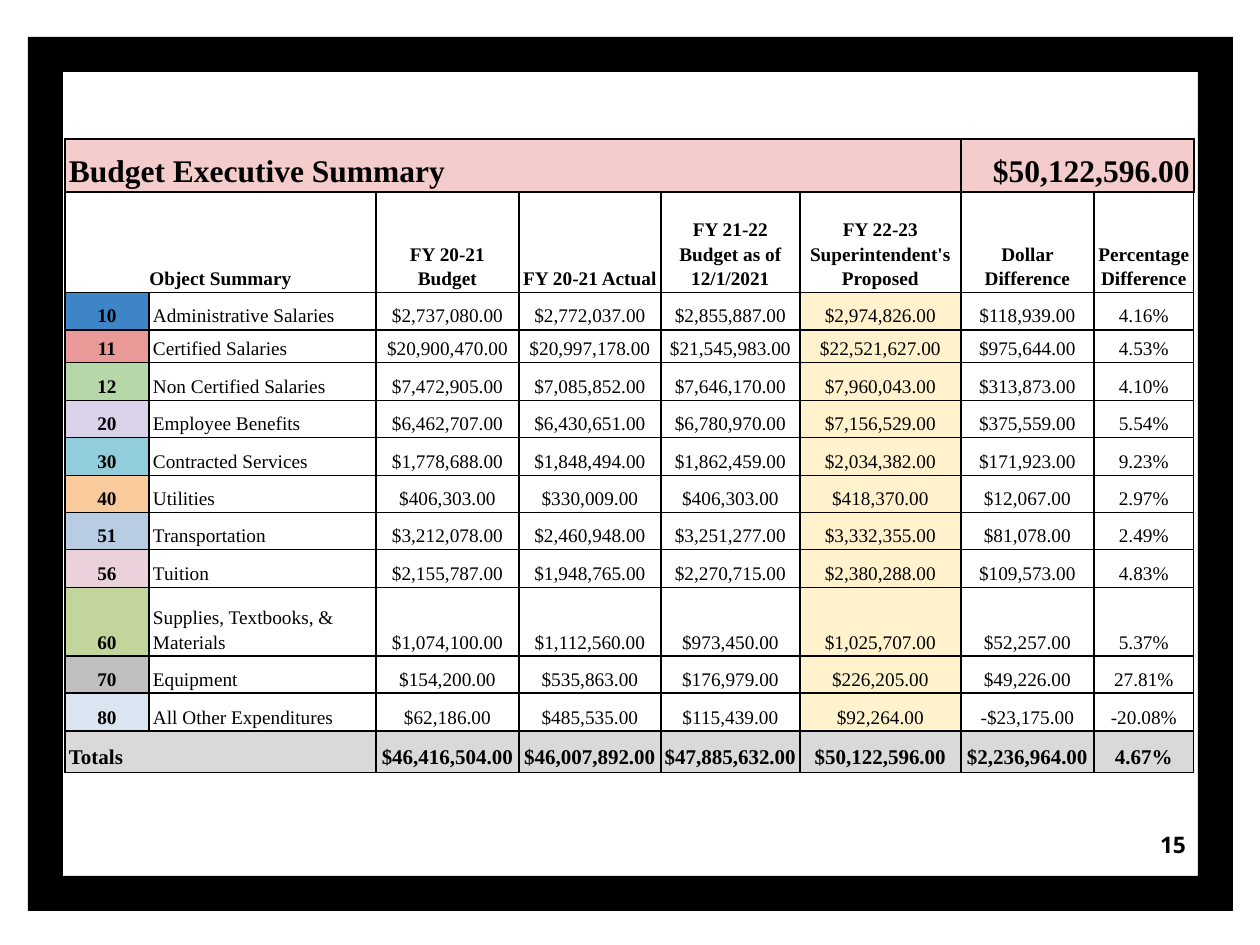
from pptx import Presentation
from pptx.dml.color import RGBColor
from pptx.enum.shapes import MSO_SHAPE
from pptx.enum.text import MSO_ANCHOR, PP_ALIGN
from pptx.oxml import parse_xml
from pptx.oxml.ns import nsdecls
from pptx.util import Pt

PX = 914400 // 126
THEME = {
    "ink": "000000", "banner": "F4CCCC", "proposed": "FFF2CC", "total": "D9D9D9",
    "serif": "Times New Roman", "sans": "Noto Sans",
    "title": 18, "body": 11, "sum": 12, "page": 13,
    "thin": 0.75, "rule": 1,
}
LEFT, MID, RIGHT = PP_ALIGN.LEFT, PP_ALIGN.CENTER, PP_ALIGN.RIGHT

BANNER = ["Budget Executive Summary", "", "", "", "", "", "$50,122,596.00", ""]
HEADS = ["Object Summary", "", "FY 20-21 Budget", "FY 20-21 Actual",
         "FY 21-22 Budget as of 12/1/2021", "FY 22-23 Superintendent's Proposed",
         "Dollar Difference", "Percentage Difference"]
ITEMS = [
    ["10", "Administrative Salaries", "$2,737,080.00", "$2,772,037.00",
     "$2,855,887.00", "$2,974,826.00", "$118,939.00", "4.16%"],
    ["11", "Certified Salaries", "$20,900,470.00", "$20,997,178.00",
     "$21,545,983.00", "$22,521,627.00", "$975,644.00", "4.53%"],
    ["12", "Non Certified Salaries", "$7,472,905.00", "$7,085,852.00",
     "$7,646,170.00", "$7,960,043.00", "$313,873.00", "4.10%"],
    ["20", "Employee Benefits", "$6,462,707.00", "$6,430,651.00",
     "$6,780,970.00", "$7,156,529.00", "$375,559.00", "5.54%"],
    ["30", "Contracted Services", "$1,778,688.00", "$1,848,494.00",
     "$1,862,459.00", "$2,034,382.00", "$171,923.00", "9.23%"],
    ["40", "Utilities", "$406,303.00", "$330,009.00",
     "$406,303.00", "$418,370.00", "$12,067.00", "2.97%"],
    ["51", "Transportation", "$3,212,078.00", "$2,460,948.00",
     "$3,251,277.00", "$3,332,355.00", "$81,078.00", "2.49%"],
    ["56", "Tuition", "$2,155,787.00", "$1,948,765.00",
     "$2,270,715.00", "$2,380,288.00", "$109,573.00", "4.83%"],
    ["60", "Supplies, Textbooks, & Materials", "$1,074,100.00", "$1,112,560.00",
     "$973,450.00", "$1,025,707.00", "$52,257.00", "5.37%"],
    ["70", "Equipment", "$154,200.00", "$535,863.00",
     "$176,979.00", "$226,205.00", "$49,226.00", "27.81%"],
    ["80", "All Other Expenditures", "$62,186.00", "$485,535.00",
     "$115,439.00", "$92,264.00", "-$23,175.00", "-20.08%"],
]
TOTALS = ["Totals", "", "$46,416,504.00", "$46,007,892.00", "$47,885,632.00",
          "$50,122,596.00", "$2,236,964.00", "4.67%"]
CODES = ["3D85C6", "EA9999", "B6D7A8", "D9D2E9", "92CDDC", "F9CB9C",
         "B8CCE4", "EAD1DC", "C2D69B", "BFBFBF", "DBE5F1"]
ROWS = [BANNER, HEADS, *ITEMS, TOTALS]
LAST = len(ROWS) - 1
WIDTHS = [84, 227, 143, 142, 139, 161, 133, 100]
HEIGHTS = [53, 101, 37, 32, 38, 37, 38, 37, 37, 38, 69, 37, 38, 41]
SPANS = [(0, 0, 5), (0, 6, 7), (1, 0, 1), (LAST, 0, 1)]


def px(*nums):
    return [n * PX for n in nums]


def write(frame, text, size="body", font="serif", bold=False, align=MID, gap=1.15):
    frame.word_wrap = True
    para = frame.paragraphs[0]
    para.alignment, para.line_spacing = align, gap
    run = para.add_run()
    run.text = text
    run.font.name, run.font.size, run.font.bold = THEME[font], Pt(THEME[size]), bold
    run.font.color.rgb = RGBColor.from_string(THEME["ink"])


def paint(cell, row, col):
    """Fill a cell by its row's kind, or by its column among the items."""
    if row == 0:
        color = THEME["banner"]
    elif row == LAST:
        color = THEME["total"]
    elif row > 1 and col == 0:
        color = CODES[row - 2]
    elif row > 1 and col == 5:
        color = THEME["proposed"]
    else:
        cell.fill.background()
        return
    cell.fill.solid()
    cell.fill.fore_color.rgb = RGBColor.from_string(color)


def border(cell, row, col):
    """Thin lines round the table, the heads and the codes; heavier ones inside."""
    thin = {
        "L": col < 2,
        "R": col in (0, len(WIDTHS) - 1),
        "T": row < 3,
        "B": row < 2 or row == LAST,
    }
    props = cell._tc.get_or_add_tcPr()
    for spot, (side, fine) in enumerate(thin.items()):
        width = Pt(THEME["thin" if fine else "rule"])
        props.insert(spot, parse_xml(
            f'<a:ln{side} {nsdecls("a")} w="{width}"><a:solidFill>'
            f'<a:srgbClr val="{THEME["ink"]}"/></a:solidFill></a:ln{side}>'))


def style(row, col):
    if row == 0:
        return {"size": "title", "bold": True, "align": RIGHT if col else LEFT}
    if row == LAST:
        return {"size": "sum", "bold": True, "align": MID if col else LEFT}
    return {"bold": row == 1 or col == 0,
            "align": LEFT if row > 1 and col == 1 else MID}


def add_frame(slide):
    frame = slide.shapes.add_shape(MSO_SHAPE.FRAME, *px(28, 37, 1205, 874))
    frame.adjustments[0] = 0.04
    frame.shadow.inherit = False
    frame.fill.solid()
    frame.fill.fore_color.rgb = RGBColor.from_string(THEME["ink"])
    frame.line.fill.background()


def add_page(slide, number):
    frame = slide.shapes.add_textbox(*px(1124, 808, 75, 72)).text_frame
    frame.margin_left = frame.margin_right = 13 * PX
    frame.margin_top = frame.margin_bottom = 13 * PX
    frame.vertical_anchor = MSO_ANCHOR.MIDDLE
    write(frame, number, size="page", font="sans", bold=True, align=RIGHT, gap=1)


def add_budget(slide):
    size = px(65, 139, sum(WIDTHS), sum(HEIGHTS))
    table = slide.shapes.add_table(len(ROWS), len(WIDTHS), *size).table
    table.first_row = table.horz_banding = False
    for col, width in zip(table.columns, px(*WIDTHS)):
        col.width = width
    for line, height in zip(table.rows, px(*HEIGHTS)):
        line.height = height
    for row, start, end in SPANS:
        table.cell(row, start).merge(table.cell(row, end))
    for row, texts in enumerate(ROWS):
        for col, text in enumerate(texts):
            cell, form = table.cell(row, col), style(row, col)
            cell.margin_left = cell.margin_right = (3 if form["align"] == MID else 4) * PX
            cell.margin_top = cell.margin_bottom = 3 * PX
            cell.vertical_anchor = MSO_ANCHOR.BOTTOM
            paint(cell, row, col)
            border(cell, row, col)
            if text:
                write(cell.text_frame, text, **form)


def main():
    deck = Presentation()
    deck.slide_width, deck.slide_height = px(1260, 945)
    slide = deck.slides.add_slide(deck.slide_layouts[6])
    add_frame(slide)
    add_page(slide, "15")
    add_budget(slide)
    deck.save("out.pptx")


if __name__ == "__main__":
    main()
